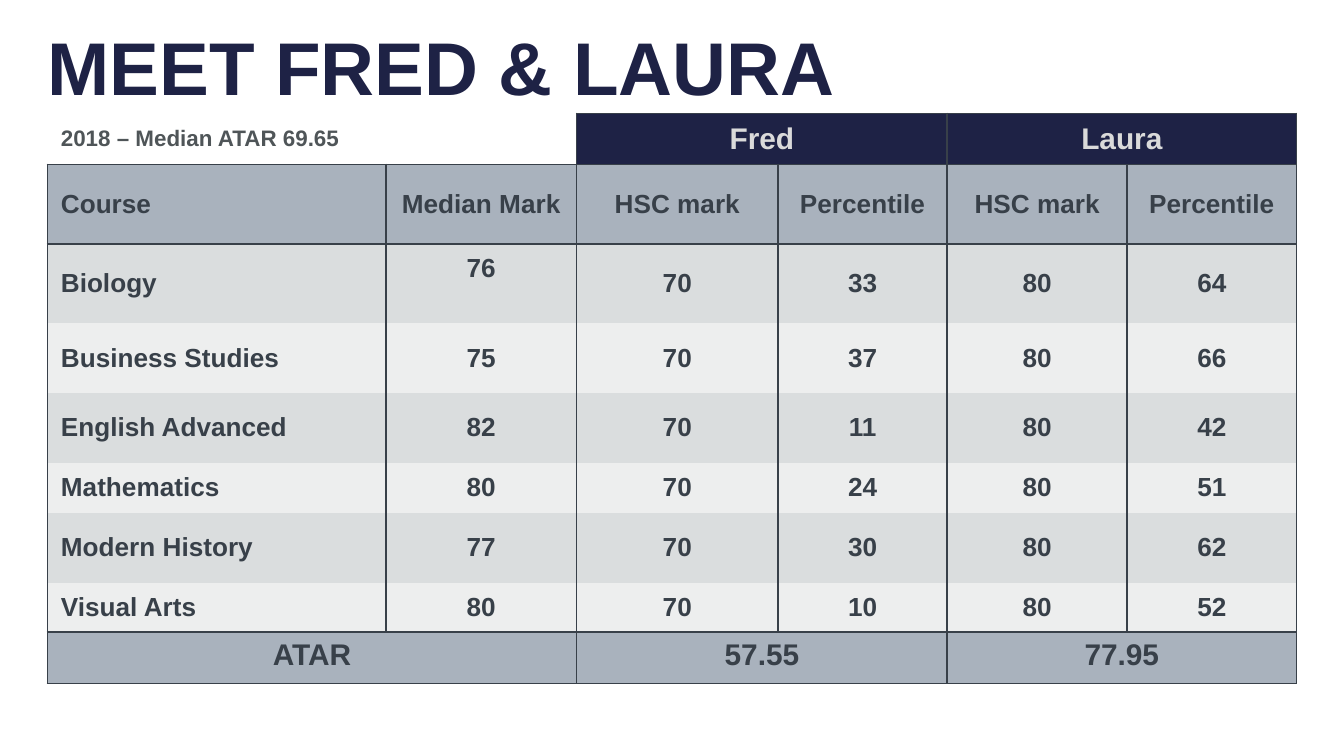
from lxml import etree
from pptx import Presentation, util as u
from pptx.dml.color import RGBColor
from pptx.enum import text
from pptx.oxml import ns

W = u.Inches(10)
H = W * 9 // 16
COLORS = {"navy": "1E2245", "ink": "384049", "note": "4F5558", "light": "DADADA",
          "header": "A9B2BD", "band": "DADDDE", "pale": "EDEEEE"}
COLUMNS = [2.52, 1.42, 1.5, 1.26, 1.34, 1.26]
ROWS = [0.38, 0.59, 0.59, 0.52, 0.52, 0.37, 0.52, 0.37, 0.38]
MARKS = [
    ["2018 – Median ATAR 69.65", "", "Fred", "", "Laura", ""],
    ["Course", "Median Mark"] + ["HSC mark", "Percentile"] * 2,
    ["Biology", 76, 70, 33, 80, 64],
    ["Business Studies", 75, 70, 37, 80, 66],
    ["English Advanced", 82, 70, 11, 80, 42],
    ["Mathematics", 80, 70, 24, 80, 51],
    ["Modern History", 77, 70, 30, 80, 62],
    ["Visual Arts", 80, 70, 10, 80, 52],
    ["ATAR", "", "57.55", "", "77.95", ""],
]
LAST = len(MARKS) - 1


def share(length, percent):
    return round(length * percent / 100)


def format_text(tf, size, color):
    for r in tf.paragraphs[0].runs:
        r.font.name, r.font.size, r.font.bold = "Arial", u.Pt(size), True
        r.font.color.rgb = RGBColor.from_string(COLORS[color])


def add_borders(cell, sides):
    tcPr = cell._tc.get_or_add_tcPr()
    for side in "LRTB":
        ln = etree.SubElement(tcPr, ns.qn(f"a:ln{side}"), w=str(u.Pt(1)))
        if side in sides:
            fill = etree.SubElement(ln, ns.qn("a:solidFill"))
            etree.SubElement(fill, ns.qn("a:srgbClr"), val=COLORS["ink"])
        else:
            etree.SubElement(ln, ns.qn("a:noFill"))


def cell_style(row, col):
    if row == 0:
        return (12, "note", None, "RB") if col < 2 else (16, "light", "navy", "LRTB")
    if row == 1:
        return 14, "ink", "header", "LRTB"
    if row == LAST:
        return 16, "ink", "header", "LRTB"
    sides = "LR" + "T" * (row == 2) + "B" * (row == LAST - 1)
    return 14, "ink", "pale" if row % 2 else "band", sides


def add_title(s, x, y, w, h):
    tf = s.shapes.add_textbox(x, y, w, h).text_frame
    tf.margin_left = tf.margin_right = tf.margin_top = tf.margin_bottom = 0
    tf.word_wrap = True
    tf.vertical_anchor = text.MSO_ANCHOR.BOTTOM
    tf.text = "MEET FRED & LAURA"
    format_text(tf, 40, "navy")


def add_marks_table(s, x, y, w, h):
    table = s.shapes.add_table(len(ROWS), len(COLUMNS), x, y, w, h).table
    style = table._tbl.tblPr.find(ns.qn("a:tableStyleId"))
    style.text = "{2D5ABB26-0587-4C30-8999-92F81FD0307C}"
    for column, weight in zip(table.columns, COLUMNS):
        column.width = round(w * weight / sum(COLUMNS))
    for row, weight in zip(table.rows, ROWS):
        row.height = round(h * weight / sum(ROWS))
    for i, values in enumerate(MARKS):
        for j, value in enumerate(values):
            cell = table.cell(i, j)
            size, color, fill, sides = cell_style(i, j)
            add_borders(cell, sides)
            if fill:
                cell.fill.solid()
                cell.fill.fore_color.rgb = RGBColor.from_string(COLORS[fill])
            else:
                cell.fill.background()
            cell.vertical_anchor = text.MSO_ANCHOR.TOP if i == LAST else text.MSO_ANCHOR.MIDDLE
            cell.text_frame.text = str(value)
            if j or i == LAST:
                cell.text_frame.paragraphs[0].alignment = text.PP_ALIGN.CENTER
            format_text(cell.text_frame, size, color)
    table.cell(2, 1).margin_bottom = u.Inches(0.27)
    for i in (0, LAST):
        for j in range(0, len(COLUMNS), 2):
            table.cell(i, j).merge(table.cell(i, j + 1))


def main():
    prs = Presentation()
    prs.slide_width, prs.slide_height = W, H
    s = prs.slides.add_slide(prs.slide_layouts[6])
    left, width = share(W, 3.53), share(W, 92.94)
    add_title(s, left, share(H, -2.13), width, share(H, 16.7))
    add_marks_table(s, left, share(H, 15), width, share(H, 75.4))
    prs.save("out.pptx")


if __name__ == "__main__":
    main()
